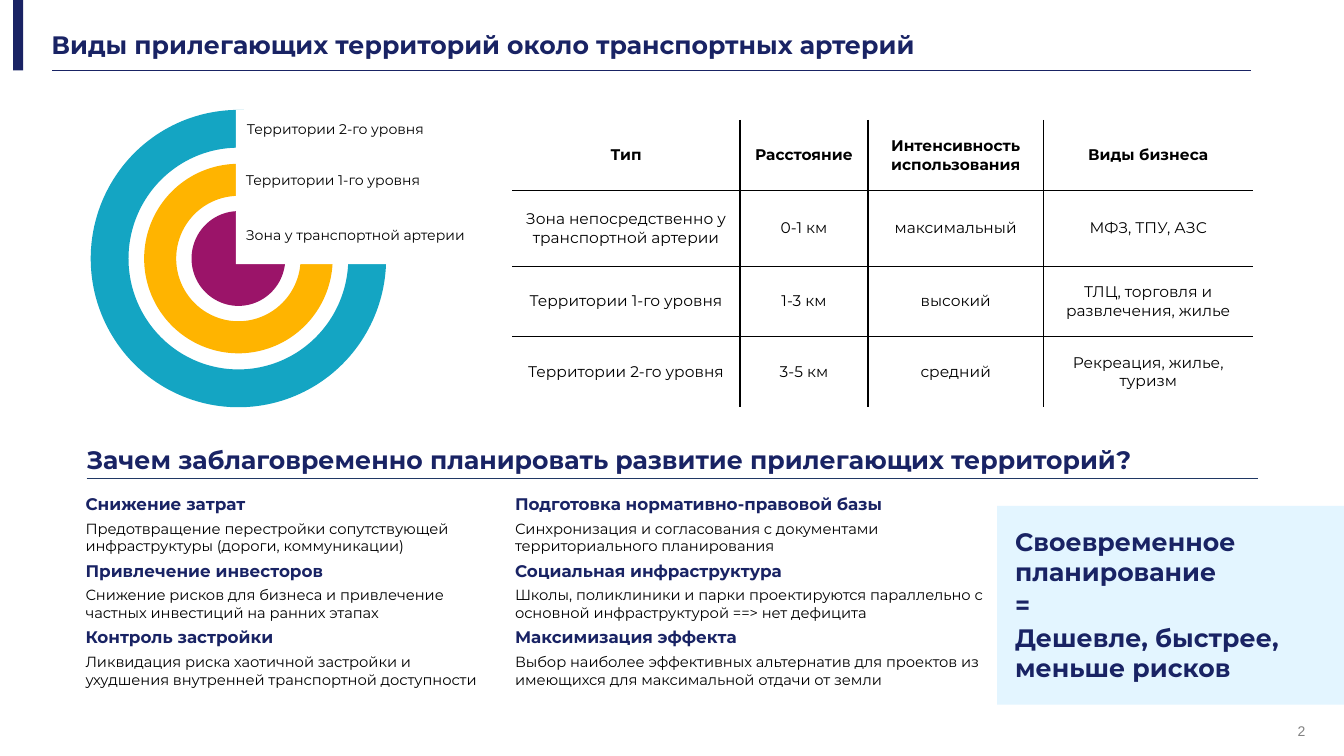
from lxml.etree import SubElement
from pptx import Presentation
from pptx.dml.color import RGBColor
from pptx.enum.shapes import MSO_CONNECTOR, MSO_SHAPE
from pptx.enum.text import MSO_ANCHOR, PP_ALIGN
from pptx.oxml.ns import qn
from pptx.util import Inches, Pt

NAVY, BLACK, WHITE = "192364", "000000", "FFFFFF"
FONT = "Montserrat"

TITLE = "Виды прилегающих территорий около транспортных артерий"
SUBTITLE = "Зачем заблаговременно планировать развитие прилегающих территорий?"
ZONE_CENTER = (2.365, 2.565)
ZONES = [
    (MSO_SHAPE.OVAL, 0.93, 0.94, None, "9B1469"),
    (MSO_SHAPE.DONUT, 1.87, 1.88, 0.17, "FFB400"),
    (MSO_SHAPE.DONUT, 2.93, 2.95, 0.128, "14A5C3"),
]
ZONE_LABELS = [
    ("Зона у транспортной артерии", 2.34, 2.2),
    ("Территории 1-го уровня", 2.34, 1.65),
    ("Территории 2-го уровня", 2.35, 1.15),
]
COL_WIDTHS = [2.26, 1.27, 1.74, 2.08]
ROW_HEIGHTS = [0.7, 0.75, 0.7, 0.7]
ROWS = [
    ("Тип", "Расстояние", "Интенсивность использования", "Виды бизнеса"),
    ("Зона непосредственно у транспортной артерии", "0-1 км", "максимальный", "МФЗ, ТПУ, АЗС"),
    ("Территории 1-го уровня", "1-3 км", "высокий", "ТЛЦ, торговля и развлечения, жилье"),
    ("Территории 2-го уровня", "3-5 км", "средний", "Рекреация, жилье, туризм"),
]
REASONS = [
    (0.75, 4.18, [
        ("Снижение затрат",
         "Предотвращение перестройки сопутствующей инфраструктуры (дороги, коммуникации)"),
        ("Привлечение инвесторов",
         "Снижение рисков для бизнеса и привлечение частных инвестиций на ранних этапах"),
        ("Контроль застройки",
         "Ликвидация риска хаотичной застройки и ухудшения внутренней транспортной доступности"),
    ]),
    (5.01, 4.87, [
        ("Подготовка нормативно-правовой базы",
         "Синхронизация и согласования с документами территориального планирования"),
        ("Социальная инфраструктура",
         "Школы, поликлиники и парки проектируются параллельно с основной инфраструктурой ==> нет дефицита"),
        ("Максимизация эффекта",
         "Выбор наиболее эффективных альтернатив для проектов из имеющихся для максимальной отдачи от земли"),
    ]),
]
SUMMARY = ["Своевременное планирование", "=", "Дешевле, быстрее, меньше рисков"]


def rgb(color):
    return RGBColor.from_string(color)


def style(p, size, color=BLACK, bold=False, name=FONT):
    p.font.size = Pt(size)
    p.font.name = name
    p.font.bold = bold
    p.font.color.rgb = rgb(color)


def add_text(s, box, items, after=0, spacing=None, inset=True):
    tf = s.shapes.add_textbox(*map(Inches, box)).text_frame
    tf.word_wrap = True
    if not inset:
        tf.margin_left = tf.margin_right = tf.margin_top = tf.margin_bottom = 0
    for i, (text, *look) in enumerate(items):
        p = tf.add_paragraph() if i else tf.paragraphs[0]
        p.text = text
        p.space_after = Pt(after)
        if spacing:
            p.line_spacing = spacing
        style(p, *look)


def add_shape(s, kind, box, color):
    sp = s.shapes.add_shape(kind, *map(Inches, box))
    sp.shadow.inherit = False
    sp.fill.solid()
    sp.fill.fore_color.rgb = rgb(color)
    sp.line.fill.background()
    return sp


def add_rule(s, left, right, y, color, width):
    line = s.shapes.add_connector(MSO_CONNECTOR.STRAIGHT, *map(Inches, (left, y, right, y)))
    line.line.color.rgb = rgb(color)
    line.line.width = Pt(width)
    SubElement(line._element.spPr, qn("a:effectLst"))


def set_borders(cell, visible):
    tc_pr = cell._tc.get_or_add_tcPr()
    for side in ("L", "R", "T", "B"):
        ln = SubElement(tc_pr, qn(f"a:ln{side}"), w=str(Pt(1)))
        if visible[side]:
            SubElement(SubElement(ln, qn("a:solidFill")), qn("a:srgbClr"), val=BLACK)
        else:
            SubElement(ln, qn("a:noFill"))


def add_zone_table(s):
    n_rows, n_cols = len(ROWS), len(COL_WIDTHS)
    box = (5.08, 1.19, sum(COL_WIDTHS), sum(ROW_HEIGHTS))
    table = s.shapes.add_table(n_rows, n_cols, *map(Inches, box)).table
    table.first_row = table.horz_banding = False
    for col, width in zip(table.columns, COL_WIDTHS):
        col.width = Inches(width)
    for r, row in enumerate(ROWS):
        table.rows[r].height = Inches(ROW_HEIGHTS[r])
        for c, text in enumerate(row):
            cell = table.cell(r, c)
            set_borders(cell, {"L": c > 0, "R": c < n_cols - 1, "T": r > 0, "B": r < n_rows - 1})
            cell.fill.background()
            cell.vertical_anchor = MSO_ANCHOR.MIDDLE
            p = cell.text_frame.paragraphs[0]
            p.text = text
            p.alignment = PP_ALIGN.CENTER
            style(p, 11, bold=r == 0)


def main():
    prs = Presentation()
    prs.slide_width, prs.slide_height = Inches(13.33), Inches(7.5)
    s = prs.slides.add_slide(prs.slide_layouts[6])

    add_rule(s, 0.52, 12.41, 0.7, NAVY, 0.5)
    add_shape(s, MSO_SHAPE.RECTANGLE, (0.13, 0, 0.1, 0.7), NAVY)
    add_text(s, (0.51, 0.32, 12.74, 0.27), [(TITLE, 18, NAVY, True)], spacing=0.9, inset=False)
    add_text(s, (12.87, 7.17, 0.32, 0.25), [("2", 10, "828282", False, "Arial")], inset=False)

    add_shape(s, MSO_SHAPE.RECTANGLE, (9.89, 5.02, 3.44, 1.97), "E3F5FF")
    add_rule(s, 0.86, 12.48, 4.75, "203864", 1)
    for left, width, reasons in REASONS:
        items = []
        for heading, detail in reasons:
            items += [(heading, 12, NAVY, True), (detail, 10.5)]
        add_text(s, (left, 4.85, width, 2.05), items, after=4)
    add_text(s, (9.97, 5.17, 3.08, 1.67), [(t, 18, NAVY, True) for t in SUMMARY], after=2)
    add_text(s, (0.86, 4.44, 12.01, 0.27), [(SUBTITLE, 18, NAVY, True)], spacing=0.9, inset=False)

    cx, cy = ZONE_CENTER
    for kind, w, h, ring, color in ZONES:
        sp = add_shape(s, kind, (cx - w / 2, cy - h / 2, w, h), color)
        if ring:
            sp.adjustments[0] = ring
    add_shape(s, MSO_SHAPE.RECTANGLE, (2.34, 1.09, 2.05, 1.53), WHITE)
    for text, left, top in ZONE_LABELS:
        add_text(s, (left, top, 2.49, 0.28), [(text, 10)])

    add_zone_table(s)
    prs.save("out.pptx")


if __name__ == "__main__":
    main()
